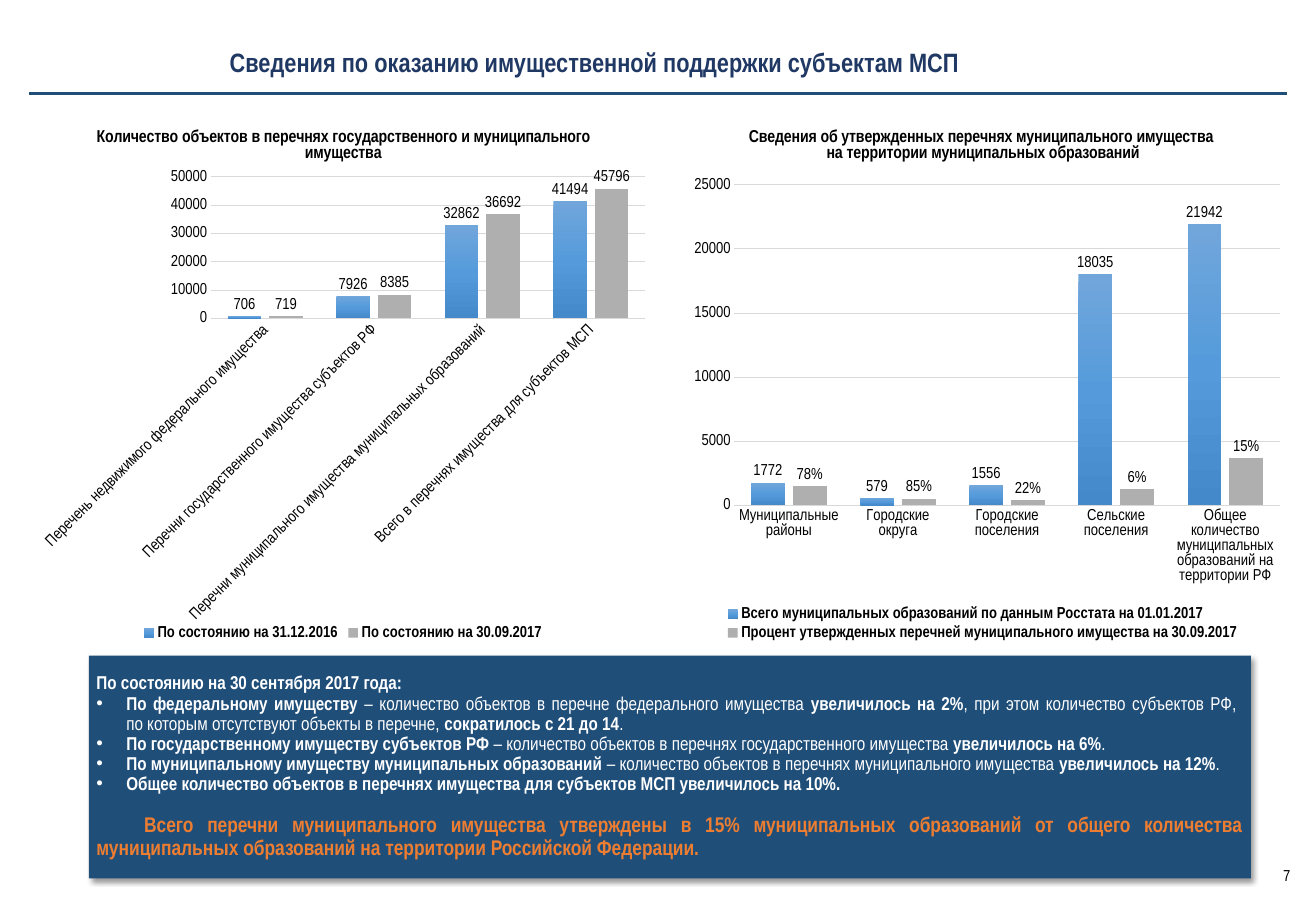
from pptx import Presentation
from pptx.chart.data import CategoryChartData
from pptx.dml.color import RGBColor
from pptx.enum.chart import XL_CHART_TYPE as ChartType, XL_LABEL_POSITION as LabelPos
from pptx.enum.chart import XL_LEGEND_POSITION as LegendPos, XL_TICK_MARK as Tick
from pptx.enum.shapes import MSO_CONNECTOR as Connector
from pptx.enum.text import MSO_ANCHOR as Anchor, MSO_AUTO_SIZE as AutoSize, PP_ALIGN as Align
from pptx.oxml import parse_xml
from pptx.oxml.ns import nsdecls
from pptx.util import Pt

COLORS = {"title": "203864", "navy": "1F4E79", "text": "000000", "white": "FFFFFF",
          "accent": "ED7D31", "grid": "D9D9D9", "grey": "AFAFAF"}
BLUE_STOPS = [(0, "71A6DB"), (50, "559BDB"), (100, "448ACA")]
FONT = "Arial Narrow"

MUNICIPAL = {
    "title": ["Сведения об утвержденных перечнях муниципального имущества ",
              "на территории муниципальных образований"],
    "categories": ["Муниципальные районы", "Городские округа", "Городские поселения",
                   "Сельские поселения",
                   "Общее количество муниципальных образований на территории РФ"],
    "series": [("Всего муниципальных образований по данным Росстата на 01.01.2017",
                [1772, 579, 1556, 18035, 21942]),
               ("Процент утвержденных перечней муниципального имущества на 30.09.2017",
                [1482, 517, 429, 1279, 3707])],
    "shares": ["78%", "85%", "22%", "6%", "15%"],
    "plot": (0.09, 0.14, 0.9, 0.6),
}
OBJECTS = {
    "title": ["Количество объектов в перечнях государственного и муниципального имущества"],
    "categories": ["Перечень недвижимого федерального имущества",
                   "Перечни государственного имущества субъектов РФ",
                   "Перечни муниципального имущества муниципальных образований",
                   "Всего в перечнях имущества для субъектов МСП"],
    "series": [("По состоянию на 31.12.2016", [706, 7926, 32862, 41494]),
               ("По состоянию на 30.09.2017", [719, 8385, 36692, 45796])],
    "shares": [],
    "plot": (0.29, 0.125, 0.69, 0.265),
    "label_angle": -45,
}

HEADING = "По состоянию на 30 сентября 2017 года:"
# Runs of each bullet alternate bold and regular, starting with bold
BULLETS = [
    ["По федеральному имуществу ", "– количество объектов в перечне федерального имущества ",
     "увеличилось на 2%",
     ", при этом количество субъектов РФ, \nпо которым отсутствуют объекты в перечне, ",
     "сократилось с 21 до 14", "."],
    ["По государственному имуществу субъектов РФ",
     " – количество объектов в перечнях государственного имущества ", "увеличилось на 6%", "."],
    ["По муниципальному имуществу муниципальных образований ",
     "– количество объектов в перечнях муниципального имущества ", "увеличилось на 12%", "."],
    ["Общее количество объектов в перечнях имущества для субъектов МСП увеличилось на 10%."],
]
CONCLUSION = ("Всего перечни муниципального имущества утверждены в 15% муниципальных образований "
              "от общего количества муниципальных образований на территории Российской Федерации.")


def rgb(name):
    return RGBColor.from_string(COLORS[name])


def style(font, size, color="text", bold=False):
    font.name, font.size, font.bold = FONT, Pt(size), bold
    font.color.rgb = rgb(color)


def write(paragraph, text, size, color="text", bold=False):
    for i, line in enumerate(text.split("\n")):
        if i:
            paragraph.add_line_break()
        run = paragraph.add_run()
        run.text = line
        style(run.font, size, color, bold)


def place(shape, box):
    shape.left, shape.top, shape.width, shape.height = (Pt(v) for v in box)


def add_header(slide, box):
    left, top, width, height = box
    # Title
    title = slide.shapes.title
    place(title, (left + 144, top, width - 160, height - 8))
    frame = title.text_frame
    frame.auto_size, frame.vertical_anchor = AutoSize.NONE, Anchor.MIDDLE
    frame.paragraphs[0].alignment = Align.LEFT
    write(frame.paragraphs[0], "Сведения по оказанию имущественной поддержки субъектам МСП",
          20, "title", True)
    # Rule below the title
    y = Pt(top + height)
    rule = slide.shapes.add_connector(Connector.STRAIGHT, Pt(left), y, Pt(left + width), y)
    rule.line.color.rgb, rule.line.width = rgb("navy"), Pt(1.75)
    rule._element.spPr.append(parse_xml(f"<a:effectLst {nsdecls('a')}/>"))


def fill_gradient(series):
    series.format.fill.solid()
    solid = series._element.spPr.find(".//{*}solidFill")
    stops = "".join(f'<a:gs pos="{pos * 1000}"><a:srgbClr val="{color}"/></a:gs>'
                    for pos, color in BLUE_STOPS)
    solid.getparent().replace(solid, parse_xml(
        f'<a:gradFill {nsdecls("a")}><a:gsLst>{stops}</a:gsLst><a:lin ang="5400000"/></a:gradFill>'))


def set_plot_layout(chart, fractions):
    area = chart._chartSpace.chart.plotArea
    for old in area.findall("{*}layout"):
        area.remove(old)
    parts = "".join(f'<c:{key} val="{value}"/>' for key, value in zip("xywh", fractions))
    area.insert(0, parse_xml(
        f'<c:layout {nsdecls("c")}><c:manualLayout><c:layoutTarget val="inner"/>'
        f'<c:xMode val="edge"/><c:yMode val="edge"/>{parts}</c:manualLayout></c:layout>'))


def add_column_chart(slide, box, content):
    data = CategoryChartData()
    data.categories = content["categories"]
    for name, values in content["series"]:
        data.add_series(name, values)
    chart = slide.shapes.add_chart(ChartType.COLUMN_CLUSTERED, *(Pt(v) for v in box), data).chart
    style(chart.font, 12)
    # Title and legend
    chart.has_title = True
    write(chart.chart_title.text_frame.paragraphs[0], "\n".join(content["title"]), 13, bold=True)
    chart.chart_title.include_in_layout = False
    chart.has_legend = True
    chart.legend.position, chart.legend.include_in_layout = LegendPos.BOTTOM, False
    style(chart.legend.font, 12, bold=True)
    # Axes
    for axis in (chart.category_axis, chart.value_axis):
        axis.major_tick_mark = axis.minor_tick_mark = Tick.NONE
        style(axis.tick_labels.font, 12)
    chart.category_axis.format.line.color.rgb = rgb("grid")
    chart.category_axis.format.line.width = Pt(1)
    chart.value_axis.format.line.fill.background()
    grid = chart.value_axis.major_gridlines.format.line
    grid.color.rgb, grid.width = rgb("grid"), Pt(0.75)
    if "label_angle" in content:
        body = chart.category_axis._element.find("{*}txPr/{*}bodyPr")
        body.set("rot", str(content["label_angle"] * 60000))
        body.set("vert", "horz")
    # Columns and their labels
    plot = chart.plots[0]
    plot.gap_width, plot.overlap, plot.vary_by_categories = 100, -24, False
    before, after = plot.series
    fill_gradient(before)
    after.format.fill.solid()
    after.format.fill.fore_color.rgb = rgb("grey")
    for series in (before, after):
        labels = series.data_labels
        labels.show_value, labels.position = True, LabelPos.OUTSIDE_END
        style(labels.font, 12)
    for i, share in enumerate(content["shares"]):
        label = after.points[i].data_label
        write(label.text_frame.paragraphs[0], share, 12)
        label.position = LabelPos.OUTSIDE_END
    set_plot_layout(chart, content["plot"])


def format_line(paragraph, margin=0, indent=0, bullet=None):
    props = paragraph._p.get_or_add_pPr()
    props.set("marL", str(Pt(margin)))
    props.set("indent", str(Pt(indent)))
    mark = f'buChar {nsdecls("a")} char="{bullet}"' if bullet else f'buNone {nsdecls("a")}'
    props.append(parse_xml(f"<a:{mark}/>"))
    paragraph.alignment, paragraph.line_spacing = Align.JUSTIFY, 0.9
    paragraph.space_before = paragraph.space_after = Pt(0)


def add_summary(slide, box):
    # Panel
    summary = slide.placeholders[1]
    place(summary, box)
    summary.fill.solid()
    summary.fill.fore_color.rgb = rgb("navy")
    summary._element.spPr.append(parse_xml(
        f'<a:effectLst {nsdecls("a")}><a:outerShdw blurRad="{Pt(4)}" dist="{Pt(3)}" dir="2700000" '
        f'algn="tl" rotWithShape="0"><a:srgbClr val="{COLORS["text"]}"><a:alpha val="40000"/>'
        '</a:srgbClr></a:outerShdw></a:effectLst>'))
    frame = summary.text_frame
    frame.auto_size, frame.vertical_anchor, frame.word_wrap = AutoSize.NONE, Anchor.MIDDLE, True
    frame.margin_left = frame.margin_right = Pt(5.7)
    frame.margin_top = frame.margin_bottom = Pt(0)
    # Heading and bullets
    heading = frame.paragraphs[0]
    format_line(heading)
    write(heading, HEADING, 14, "white", True)
    for runs in BULLETS:
        item = frame.add_paragraph()
        format_line(item, 22.5, -22.5, "•")
        for i, text in enumerate(runs):
            write(item, text, 14, "white", i % 2 == 0)
    # Conclusion
    conclusion = frame.add_paragraph()
    format_line(conclusion, indent=36)
    conclusion.space_before = Pt(15)
    write(conclusion, CONCLUSION, 16, "accent", True)


def add_page_number(slide, box):
    frame = slide.shapes.add_textbox(*(Pt(v) for v in box)).text_frame
    frame.word_wrap = True
    number = frame.paragraphs[0]
    number.alignment, number.line_spacing = Align.RIGHT, 0.8
    write(number, "7", 12)


def main():
    deck = Presentation()
    deck.slide_width, deck.slide_height = Pt(992.16), Pt(680.4)
    slide = deck.slides.add_slide(deck.slide_layouts[1])
    add_header(slide, (22, 31, 948, 39.5))
    add_page_number(slide, (933, 652, 47, 19))
    add_column_chart(slide, (512.5, 83, 457, 403), MUNICIPAL)
    add_column_chart(slide, (21.5, 83, 474.5, 403), OBJECTS)
    add_summary(slide, (67, 494.5, 876, 168))
    deck.save("out.pptx")


if __name__ == "__main__":
    main()
